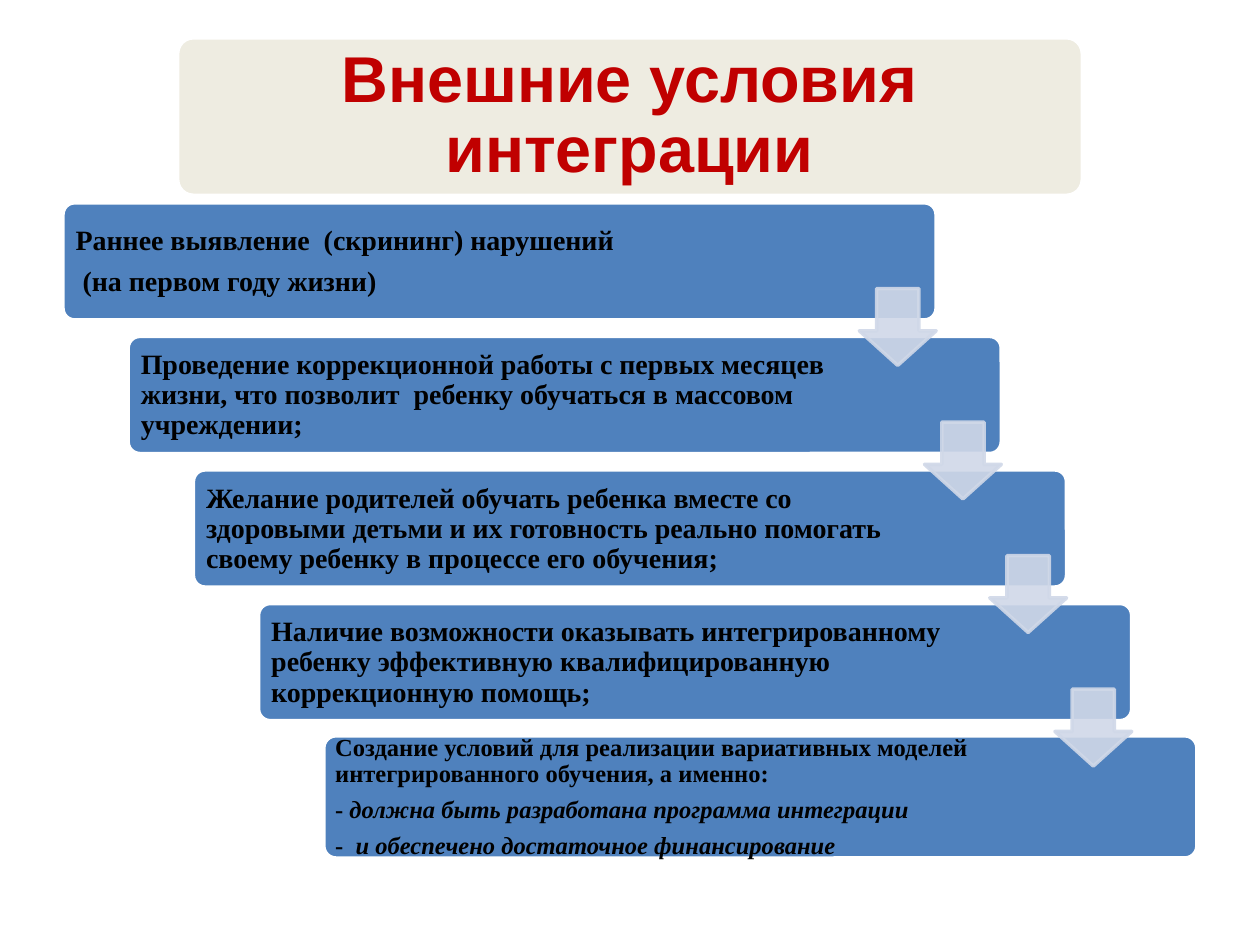
from dataclasses import dataclass

from lxml.etree import SubElement
from pptx import Presentation
from pptx.dml.color import RGBColor
from pptx.enum.shapes import MSO_SHAPE as Shape
from pptx.enum.text import MSO_ANCHOR as Anchor, MSO_AUTO_SIZE as AutoSize, PP_ALIGN as Align
from pptx.oxml.ns import qn
from pptx.util import Inches, Pt


@dataclass(frozen=True)
class Theme:
    step: str = "4F81BD"
    arrow: str = "D0D8E8"
    panel: str = "EEECE1"
    border: str = "FFFFFF"
    heading: str = "C00000"
    ink: str = "000000"
    heading_font: str = "Arial"
    body_font: str = "Times New Roman"
    heading_size: int = 37
    body_size: int = 16
    small_size: int = 14


def add_span(para, text, *, font, size, color, italic=None):
    span = para.add_run()
    span.text = text
    span.font.name = font
    span.font.size = Pt(size)
    span.font.bold = True
    span.font.italic = italic
    span.font.color.rgb = RGBColor.from_string(color)


class StairSlide:
    def __init__(self, deck, theme):
        self.theme = theme
        self.page = deck.slides.add_slide(deck.slide_layouts[5])

    def shape(self, kind, left, top, width, height, fill, line, adjustments, alpha=None):
        shape = self.page.shapes.add_shape(
            kind, Inches(left), Inches(top), Inches(width), Inches(height))
        shape.shadow.inherit = False
        for index, value in enumerate(adjustments):
            shape.adjustments[index] = value
        shape.fill.solid()
        shape.fill.fore_color.rgb = RGBColor.from_string(fill)
        shape.line.color.rgb = RGBColor.from_string(line)
        shape.line.width = Pt(2)
        if alpha:
            for color in shape.element.spPr.iter(qn("a:srgbClr")):
                SubElement(color, qn("a:alpha"), val=str(alpha * 1000))
        return shape

    def panel(self, left, top, width, height, fill):
        return self.shape(Shape.ROUNDED_RECTANGLE, left, top, width, height,
                          fill, self.theme.border, [0.1])

    def arrow(self, left, top):
        color = self.theme.arrow
        self.shape(Shape.DOWN_ARROW, left, top, 0.61, 0.61,
                   color, color, [0.55, 0.45], alpha=90)

    def fill_text(self, box, lines, size, font, color, inset_x, inset_y, align=Align.LEFT):
        frame = box.text_frame
        frame.word_wrap = True
        frame.auto_size = AutoSize.NONE
        frame.vertical_anchor = Anchor.MIDDLE
        frame.margin_left = frame.margin_right = Inches(inset_x)
        frame.margin_top = frame.margin_bottom = Inches(inset_y)
        for index, line in enumerate(lines):
            para = frame.add_paragraph() if index else frame.paragraphs[0]
            para.alignment = align
            para.line_spacing = 0.9
            para.space_before = Pt(0)
            para.space_after = Pt(round(size * 0.39, 1))
            plain, italic = line if isinstance(line, tuple) else (line, "")
            add_span(para, plain, font=font, size=size, color=color)
            if italic:
                add_span(para, italic, font=font, size=size, color=color, italic=True)

    def step(self, left, top, height, lines, size, inset):
        self.panel(left, top, 6.93, height, self.theme.step)
        box = self.page.shapes.add_textbox(
            Inches(left + 0.03), Inches(top + 0.03), Inches(5.75), Inches(height - 0.05))
        self.fill_text(box, lines, size, self.theme.body_font, self.theme.ink, inset, inset)

    def title(self, text):
        panel = self.panel(1.41, 0.3, 7.18, 1.25, self.theme.panel)
        title = self.page.shapes.title
        title.left, title.top = Inches(1.44), Inches(0.34)
        title.width, title.height = Inches(7.11), Inches(1.17)
        self.fill_text(title, [text], self.theme.heading_size, self.theme.heading_font,
                       self.theme.heading, 0.08, 0.05, Align.CENTER)
        panel.element.addnext(title.element)


STEPS = [
    ["Раннее выявление  (скрининг) нарушений", " (на первом году жизни)"],
    ["Проведение коррекционной работы с первых месяцев жизни, что позволит  ребенку "
     "обучаться в массовом учреждении;"],
    ["Желание родителей обучать ребенка вместе со здоровыми детьми и их готовность "
     "реально помогать своему ребенку в процессе его обучения;"],
    ["Наличие возможности оказывать интегрированному ребенку эффективную "
     "квалифицированную коррекционную помощь;"],
    ["Создание условий для реализации вариативных моделей интегрированного обучения, "
     "а именно:",
     ("- ", "должна быть разработана программа интеграции"),
     ("-  ", "и обеспечено достаточное финансирование")],
]
SHIFT_X = (2.57 - 0.5) / (len(STEPS) - 1)
SHIFT_Y = 1.06


def main():
    deck = Presentation()
    deck.slide_width, deck.slide_height = Inches(10), Inches(7.5)
    theme = Theme()
    slide = StairSlide(deck, theme)
    *regular, final = STEPS
    for index, lines in enumerate(regular):
        slide.step(0.5 + SHIFT_X * index, 1.61 + SHIFT_Y * index, 0.93,
                   lines, theme.body_size, 0.07)
    slide.step(2.57, 5.84, 0.97, final, theme.small_size, 0.06)
    for index in range(len(regular)):
        slide.arrow(6.82 + SHIFT_X * index, 2.29 + SHIFT_Y * index)
    slide.title("Внешние условия интеграции")
    deck.save("out.pptx")


if __name__ == "__main__":
    main()
